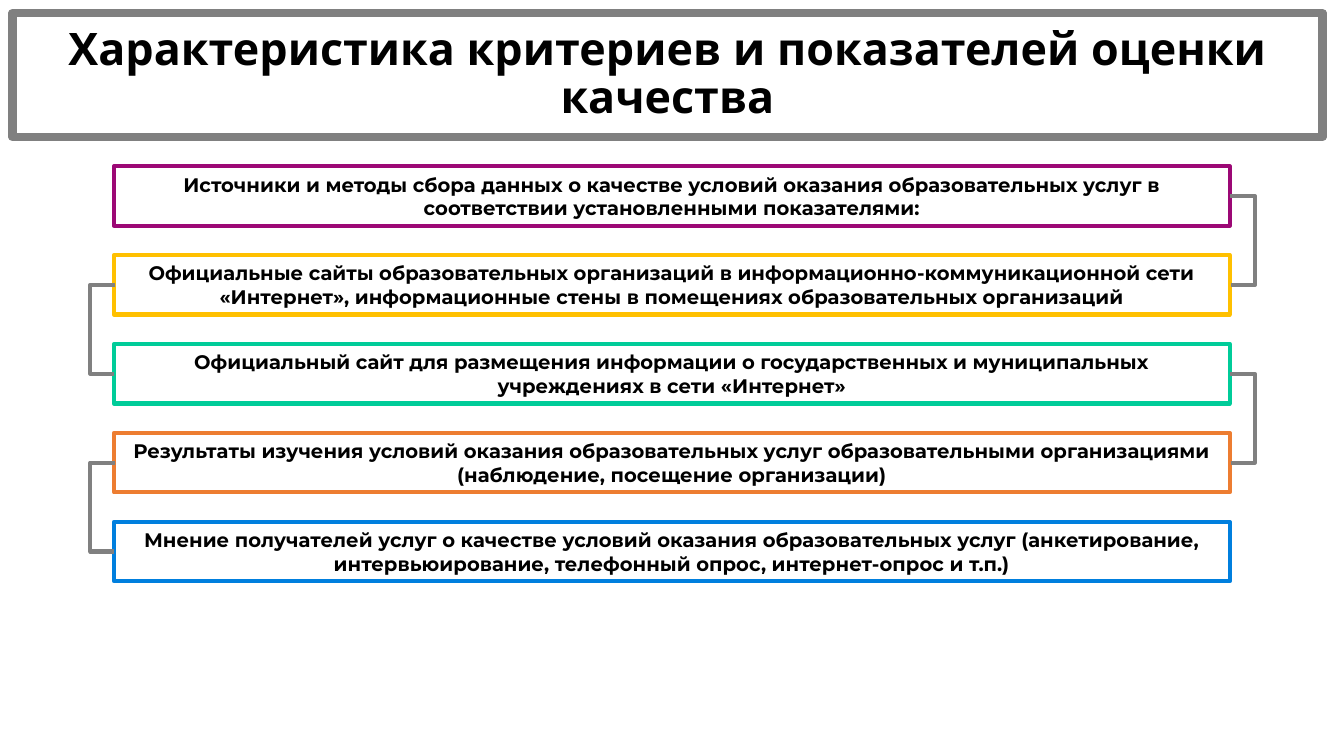
from lxml import etree
from pptx import Presentation
from pptx.dml.color import RGBColor
from pptx.enum.shapes import MSO_CONNECTOR, MSO_SHAPE
from pptx.enum.text import MSO_ANCHOR, MSO_AUTO_SIZE, PP_ALIGN
from pptx.oxml.ns import qn
from pptx.util import Pt

RECT = MSO_SHAPE.RECTANGLE
ELBOW = MSO_CONNECTOR.ELBOW
MIDDLE = MSO_ANCHOR.MIDDLE
CENTER = PP_ALIGN.CENTER
NO_FIT = MSO_AUTO_SIZE.NONE
TITLE_ONLY = 5

TITLE = "Характеристика критериев и показателей оценки качества"
SOURCES = [
    ("9C0875", "Источники и методы сбора данных о качестве условий оказания "
               "образовательных услуг в соответствии установленными показателями:"),
    ("FFC000", "Официальные сайты образовательных организаций в "
               "информационно-коммуникационной сети «Интернет», информационные "
               "стены в помещениях образовательных организаций"),
    ("00CC99", "Официальный сайт для размещения информации о государственных "
               "и муниципальных учреждениях в сети «Интернет»"),
    ("ED7D31", "Результаты изучения условий оказания образовательных услуг "
               "образовательными организациями (наблюдение, посещение организации)"),
    ("007FDE", "Мнение получателей услуг о качестве условий оказания "
               "образовательных услуг (анкетирование, интервьюирование, "
               "телефонный опрос, интернет-опрос и т.п.)"),
]

# Layout of the boxes, in points
LEFT, TOP, WIDTH, HEIGHT, PITCH = 81.4, 118.8, 797, 42.4, 63.5
REACH = 18  # how far a bracket stands out from the boxes


def rgb(value):
    return RGBColor.from_string(value)


class SlideBuilder:
    title_font = "League Spartan"
    body_font = "Montserrat"
    text_color = "000000"
    gray = "808080"

    def __init__(self, slide):
        self.slide = slide

    def outline(self, sp, color, weight):
        sp.line.color.rgb = rgb(color)
        sp.line.width = Pt(weight)

    def set_text(self, sp, text, font, size, spacing=1.0):
        tf = sp.text_frame
        tf.text = text
        tf.word_wrap = True
        tf.auto_size = NO_FIT
        tf.vertical_anchor = MIDDLE
        p = tf.paragraphs[0]
        p.alignment = CENTER
        p.line_spacing = spacing
        r = p.runs[0]
        r.font.name = font
        r.font.size = Pt(size)
        r.font.bold = True
        r.font.color.rgb = rgb(self.text_color)

    def title(self, text, x, y, w, h):
        sp = self.slide.shapes.title
        sp.left, sp.top, sp.width, sp.height = Pt(x), Pt(y), Pt(w), Pt(h)
        self.outline(sp, self.gray, 6)
        self.set_text(sp, text, self.title_font, 32, spacing=0.9)

    def box(self, text, color, x, y, w, h):
        sp = self.slide.shapes.add_shape(RECT, Pt(x), Pt(y), Pt(w), Pt(h))
        sp.shadow.inherit = False
        sp.fill.background()
        self.outline(sp, color, 3)
        self.set_text(sp, text, self.body_font, 14)

    def bracket(self, x, y1, y2, side):
        """Elbow one point wide, bent outwards: side is 1 for right, -1 for left."""
        cxn = self.slide.shapes.add_connector(
            ELBOW, Pt(x), Pt(y1), Pt(x + side), Pt(y2))
        self.outline(cxn, self.gray, 3)
        sp_pr = cxn._element.spPr
        etree.SubElement(sp_pr, qn("a:effectLst"))
        av = sp_pr.find(qn("a:prstGeom")).get_or_add_avLst()
        etree.SubElement(av, qn("a:gd"), name="adj1", fmla=f"val {REACH * 100000}")


def main():
    prs = Presentation()
    prs.slide_width, prs.slide_height = Pt(960), Pt(540)
    builder = SlideBuilder(prs.slides.add_slide(prs.slide_layouts[TITLE_ONLY]))

    # Heading
    builder.title(TITLE, 8.8, 9.4, 936, 88.4)

    # Data sources
    for i, (color, text) in enumerate(SOURCES):
        builder.box(text, color, LEFT, TOP + i * PITCH, WIDTH, HEIGHT)

    # Brackets between neighbours, right and left in turn
    for i in range(len(SOURCES) - 1):
        y = TOP + HEIGHT / 2 + i * PITCH
        x, side = (LEFT + WIDTH, 1) if i % 2 == 0 else (LEFT + 1, -1)
        builder.bracket(x, y, y + PITCH, side)

    prs.save("out.pptx")


if __name__ == "__main__":
    main()
